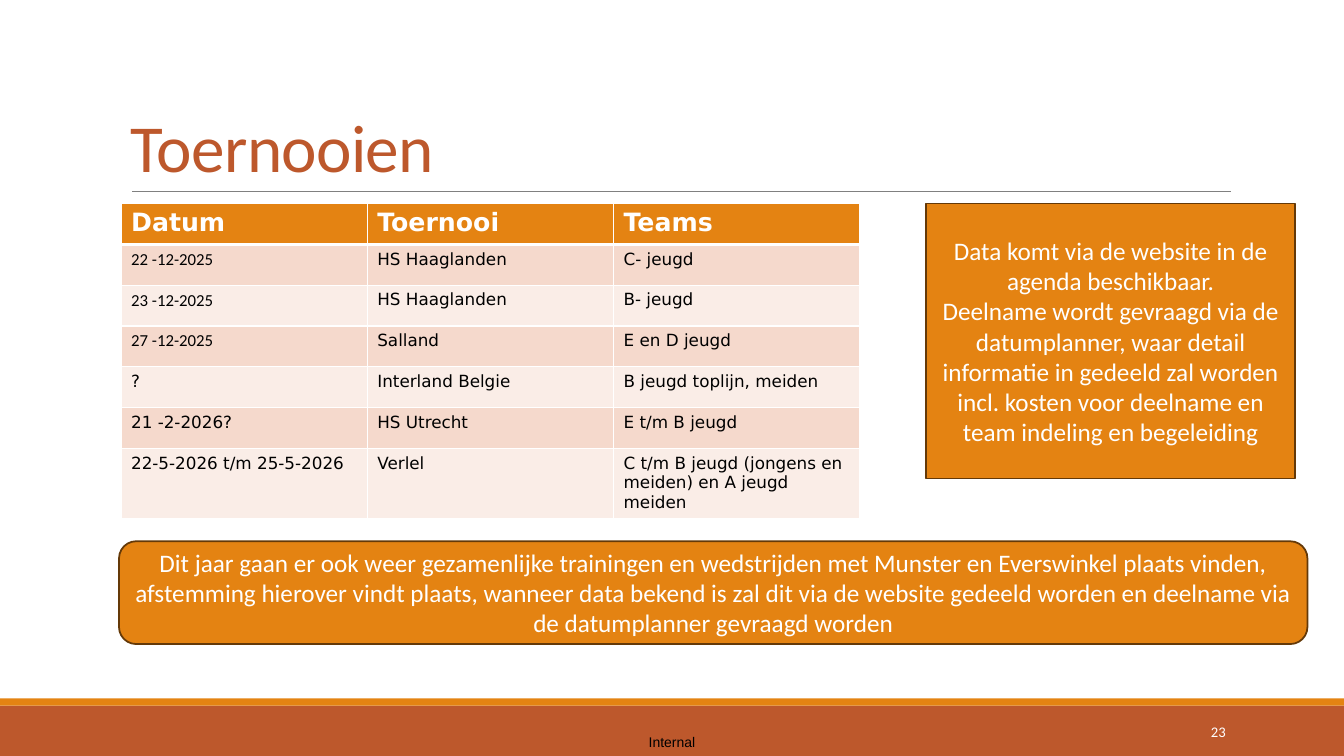
"""Build the tournament overview slide."""
from collections import namedtuple

from lxml import etree
from pptx import Presentation
from pptx import util as u
from pptx.dml.color import RGBColor
from pptx.enum import shapes, text
from pptx.oxml.ns import qn

Box = namedtuple("Box", "left top width height")

COLORS = {
    "orange": "E48312",
    "rust": "BD582C",
    "brown": "643908",
    "gray": "808080",
    "white": "FFFFFF",
    "black": "000000",
    "band_dark": "F5D9CC",
    "band_light": "FAEDE7",
}
HEADERS = ["Datum", "Toernooi", "Teams"]
TOURNAMENTS = [
    ["22 -12-2025", "HS Haaglanden", "C- jeugd"],
    ["23 -12-2025", "HS Haaglanden", "B- jeugd"],
    ["27 -12-2025", "Salland", "E en D jeugd"],
    ["?", "Interland Belgie", "B jeugd toplijn, meiden"],
    ["21 -2-2026?", "HS Utrecht", "E t/m B jeugd"],
    ["22-5-2026 t/m 25-5-2026", "Verlel",
     "C t/m B jeugd (jongens en meiden) en A jeugd meiden"],
]
AGENDA_NOTE = [
    "Data komt via de website in de agenda beschikbaar.",
    "Deelname wordt gevraagd via de datumplanner, waar detail informatie in "
    "gedeeld zal worden incl. kosten voor deelname en team indeling en begeleiding",
]
TRAINING_NOTE = [
    "Dit jaar gaan er ook weer gezamenlijke trainingen en wedstrijden met Munster "
    "en Everswinkel plaats vinden, afstemming hierover vindt plaats, wanneer data "
    "bekend is zal dit via de website gedeeld worden en deelname via de "
    "datumplanner gevraagd worden",
]


def color(name):
    """Return the named colour."""
    return RGBColor.from_string(COLORS[name])


def lengths(box):
    """Return the four measures of a box as lengths."""
    return [u.Cm(value) for value in box]


def add_span(para, words, size, tint, font="Calibri", bold=False):
    """Add one formatted run to a paragraph."""
    span = para.add_run()
    span.text = words
    span.font.size = u.Pt(size)
    span.font.name = font
    span.font.bold = bold
    span.font.color.rgb = color(tint)
    return span


def add_label(page, box, words, size, tint, align, anchor, font="Calibri"):
    """Add a one-line text box and return its paragraph and run."""
    frame = page.shapes.add_textbox(*lengths(box)).text_frame
    frame.word_wrap = True
    frame.vertical_anchor = anchor
    para = frame.paragraphs[0]
    para.alignment = align
    return para, add_span(para, words, size, tint, font)


def add_block(page, box, kind, fill):
    """Add a filled shape without outline or shadow."""
    block = page.shapes.add_shape(kind, *lengths(box))
    block.shadow.inherit = False
    block.fill.solid()
    block.fill.fore_color.rgb = color(fill)
    block.line.fill.background()
    return block


def add_heading(page, box):
    """Place the title with the thin rule along the bottom of its box."""
    bottom = u.Cm(box.top + box.height)
    rule = page.shapes.add_connector(
        shapes.MSO_CONNECTOR.STRAIGHT, u.Cm(box.left + 0.28), bottom,
        u.Cm(box.left + box.width + 0.02), bottom)
    rule.line.color.rgb = color("gray")
    rule.line.width = u.Pt(0.5)
    etree.SubElement(rule._element.spPr, qn("a:effectLst"))
    para, span = add_label(page, box, "Toernooien", 48, "rust",
                           text.PP_ALIGN.LEFT, text.MSO_ANCHOR.BOTTOM)
    para.line_spacing = 0.85
    span.font._element.set("spc", "-50")


def add_border(cell, side, points):
    """Draw a white border on one side of a cell."""
    line = etree.SubElement(cell._tc.get_or_add_tcPr(), qn(f"a:ln{side}"),
                            w=str(u.Pt(points)))
    fill = etree.SubElement(line, qn("a:solidFill"))
    etree.SubElement(fill, qn("a:srgbClr"), val=COLORS["white"])


def add_tournaments(page, box):
    """Place the tournament table with equal columns and rows."""
    rows = [HEADERS] + TOURNAMENTS
    grid = page.shapes.add_table(len(rows), len(HEADERS), *lengths(box)).table
    for column in grid.columns:
        column.width = u.Cm(box.width / len(HEADERS))
    for r, row in enumerate(rows):
        grid.rows[r].height = u.Cm(box.height / len(rows))
        for c, words in enumerate(row):
            cell = grid.cell(r, c)
            add_border(cell, "L", 1)
            add_border(cell, "R", 1)
            add_border(cell, "T", 3 if r == 1 else 1)
            add_border(cell, "B", 3 if r == 0 else 1)
            cell.fill.solid()
            band = "band_dark" if r % 2 else "band_light"
            cell.fill.fore_color.rgb = color(band if r else "orange")
            para = cell.text_frame.paragraphs[0]
            if r == 0:
                add_span(para, words, 18, "white", "DejaVu Sans", True)
            else:
                font = "Calibri" if c == 0 and r <= 3 else "DejaVu Sans"
                add_span(para, words, 12, "black", font)


def add_note(page, box, kind, paragraphs):
    """Place an outlined orange note with centred text."""
    note = add_block(page, box, kind, "orange")
    note.line.color.rgb = color("brown")
    note.line.width = u.Pt(1.25)
    frame = note.text_frame
    frame.word_wrap = True
    frame.vertical_anchor = text.MSO_ANCHOR.MIDDLE
    for i, words in enumerate(paragraphs):
        para = frame.add_paragraph() if i else frame.paragraphs[0]
        para.alignment = text.PP_ALIGN.CENTER
        add_span(para, words, 18, "white")


def add_footer(page, box):
    """Place the footer bands, the classification and the page number."""
    kind = shapes.MSO_SHAPE.RECTANGLE
    strip = 0.18
    add_block(page, Box(box.left, box.top + strip, box.width, box.height - strip),
              kind, "rust")
    add_block(page, box._replace(height=strip), kind, "orange")
    middle = text.MSO_ANCHOR.MIDDLE
    label = Box(box.left + box.width / 2 - 1.5, box.top + 0.76, 3, 0.69)
    add_label(page, label, "Internal", 10, "black",
              text.PP_ALIGN.CENTER, middle, "Arial")
    number = Box(box.left + 27.51, box.top + 0.33, 3.63, 1.02)
    add_label(page, number, "23", 10.5, "white", text.PP_ALIGN.RIGHT, middle)


def main():
    """Build and save the deck."""
    deck = Presentation()
    deck.slide_width, deck.slide_height = u.Cm(33.87), u.Cm(19.05)
    page = deck.slides.add_slide(deck.slide_layouts[6])
    add_footer(page, Box(0, 17.6, 33.87, 1.45))
    add_heading(page, Box(3.05, 0.79, 27.94, 4.04))
    add_tournaments(page, Box(3.05, 5.13, 18.62, 7.2))
    add_note(page, Box(23.34, 5.13, 9.3, 6.93),
             shapes.MSO_SHAPE.RECTANGLE, AGENDA_NOTE)
    add_note(page, Box(3, 13.64, 29.95, 2.59),
             shapes.MSO_SHAPE.ROUNDED_RECTANGLE, TRAINING_NOTE)
    deck.save("out.pptx")


if __name__ == "__main__":
    main()
